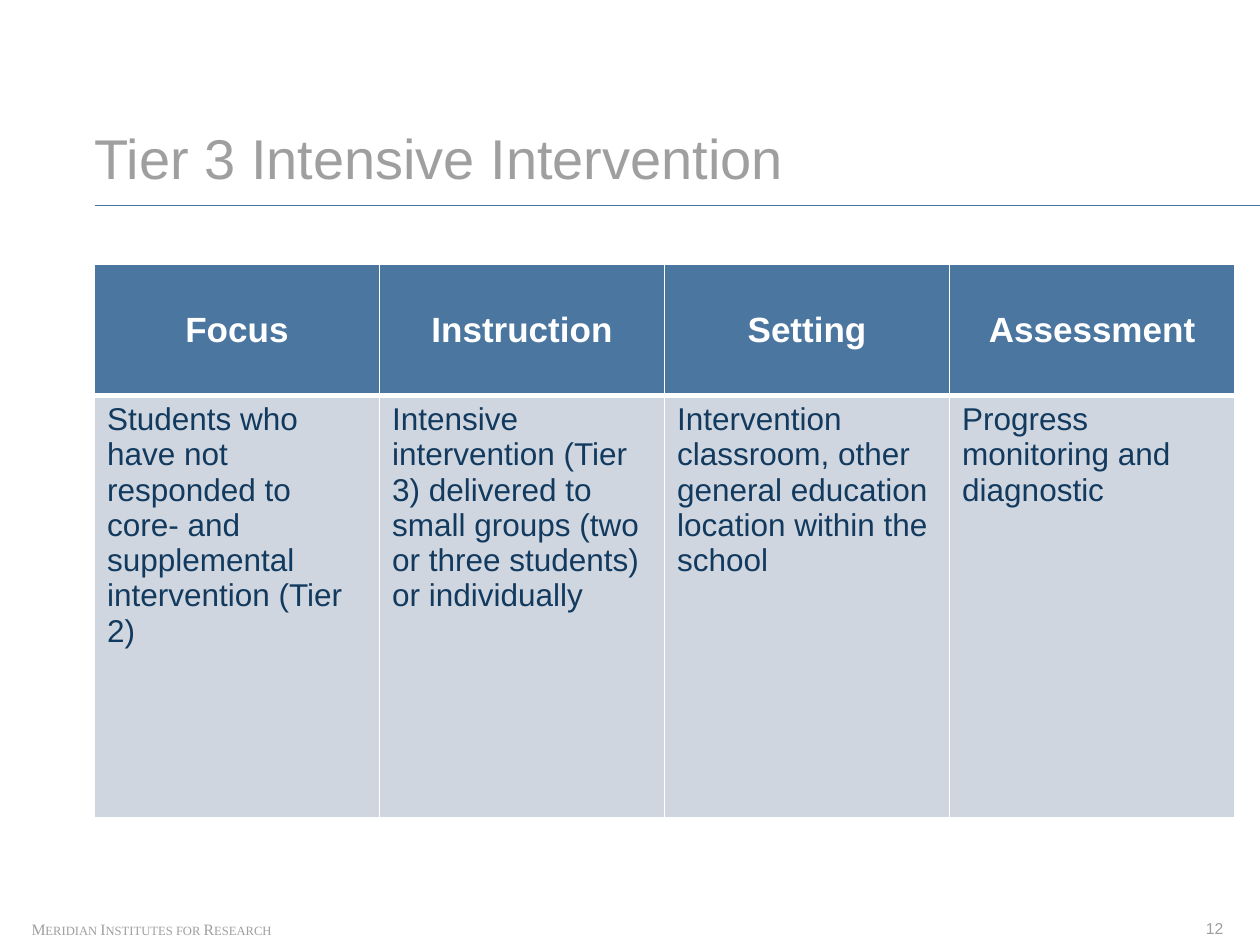
import pptx
import pptx.util
import pptx.dml.color
import pptx.enum.shapes
import pptx.enum.text
import pptx.oxml.ns
import lxml.etree

Inches = pptx.util.Inches
Pt = pptx.util.Pt
RGBColor = pptx.dml.color.RGBColor
ALIGN = pptx.enum.text.PP_ALIGN
ANCHOR = pptx.enum.text.MSO_ANCHOR
qn = pptx.oxml.ns.qn

GRAY = RGBColor(0x9F, 0x9F, 0x9F)
RULE_BLUE = RGBColor(0x47, 0x73, 0x9F)
HEADER_BLUE = RGBColor(0x4B, 0x76, 0xA0)
BODY_FILL = RGBColor(0xD0, 0xD6, 0xDF)
NAVY = RGBColor(0x12, 0x3A, 0x5F)
WHITE = RGBColor(0xFF, 0xFF, 0xFF)

COLUMNS = [
    ("Focus", "Students who have not responded to core- and supplemental intervention (Tier 2)"),
    ("Instruction", "Intensive intervention (Tier 3) delivered to small groups "
                    "(two or three students) or individually"),
    ("Setting", "Intervention classroom, other general education location within the school"),
    ("Assessment", "Progress monitoring and diagnostic"),
]


def write(frame, text, size, color, font="Arial", bold=False, align=ALIGN.LEFT,
          small_caps=False):
    paragraph = frame.paragraphs[0]
    paragraph.alignment = align
    run = paragraph.add_run()
    run.text = text
    run.font.name = font
    run.font.size = Pt(size)
    run.font.bold = bold
    run.font.color.rgb = color
    if small_caps:
        run.font._element.set("cap", "small")


def clear_margins(frame):
    frame.margin_left = frame.margin_top = frame.margin_right = frame.margin_bottom = 0


def set_borders(cell, widths):
    properties = cell._tc.get_or_add_tcPr()
    for position, (side, width) in enumerate(widths.items()):
        border = lxml.etree.Element(qn(f"a:ln{side}"), w=str(Pt(width)))
        fill = lxml.etree.SubElement(border, qn("a:solidFill"))
        lxml.etree.SubElement(fill, qn("a:srgbClr"), val=str(WHITE))
        properties.insert(position, border)


def add_heading(slide, left, top, width, height):
    title = slide.shapes.title
    title.left, title.top, title.width, title.height = left, top, width, height
    frame = title.text_frame
    clear_margins(frame)
    frame.word_wrap = True
    frame.auto_size = pptx.enum.text.MSO_AUTO_SIZE.NONE
    frame.vertical_anchor = ANCHOR.BOTTOM
    write(frame, "Tier 3 Intensive Intervention", 32, GRAY)

    rule_top = top + height + Inches(0.12)
    rule = slide.shapes.add_connector(
        pptx.enum.shapes.MSO_CONNECTOR.STRAIGHT, left, rule_top, Inches(10), rule_top)
    rule.line.color.rgb = RULE_BLUE
    rule.line.width = Pt(0.5)
    lxml.etree.SubElement(rule._element.spPr, qn("a:effectLst"))


def add_tier_table(slide, left, top, width, header_height, body_height):
    table = slide.shapes.add_table(
        2, len(COLUMNS), left, top, width, header_height + body_height).table
    table.rows[0].height = header_height
    table.rows[1].height = body_height
    for index, (heading, description) in enumerate(COLUMNS):
        table.columns[index].width = width // len(COLUMNS)

        header = table.cell(0, index)
        header.fill.solid()
        header.fill.fore_color.rgb = HEADER_BLUE
        header.vertical_anchor = ANCHOR.MIDDLE
        write(header.text_frame, heading, 20, WHITE, bold=True, align=ALIGN.CENTER)
        set_borders(header, {"L": 1, "R": 1, "T": 1, "B": 3})

        body = table.cell(1, index)
        body.fill.solid()
        body.fill.fore_color.rgb = BODY_FILL
        write(body.text_frame, description, 18, NAVY)
        set_borders(body, {"L": 1, "R": 1, "T": 3, "B": 1})


def add_footer_text(slide, left, top, width, height, text, **style):
    frame = slide.shapes.add_textbox(left, top, width, height).text_frame
    clear_margins(frame)
    frame.word_wrap = False
    write(frame, text, 9, GRAY, **style)


def main():
    presentation = pptx.Presentation()
    presentation.slide_width = Inches(10)
    presentation.slide_height = Inches(7.5)
    slide = presentation.slides.add_slide(presentation.slide_layouts[5])

    add_heading(slide, Inches(0.75), Inches(0.97), Inches(8.99), Inches(0.54))
    add_tier_table(slide, Inches(0.75), Inches(2.1), Inches(9.05), Inches(1.04), Inches(3.35))
    add_footer_text(slide, Inches(0.25), Inches(7.3), Inches(1.95), Inches(0.15),
                    "Meridian Institutes for Research", font="Times New Roman", small_caps=True)
    add_footer_text(slide, Inches(9.57), Inches(7.29), Inches(0.14), Inches(0.15),
                    "12", align=ALIGN.RIGHT)

    presentation.save("out.pptx")


if __name__ == "__main__":
    main()
